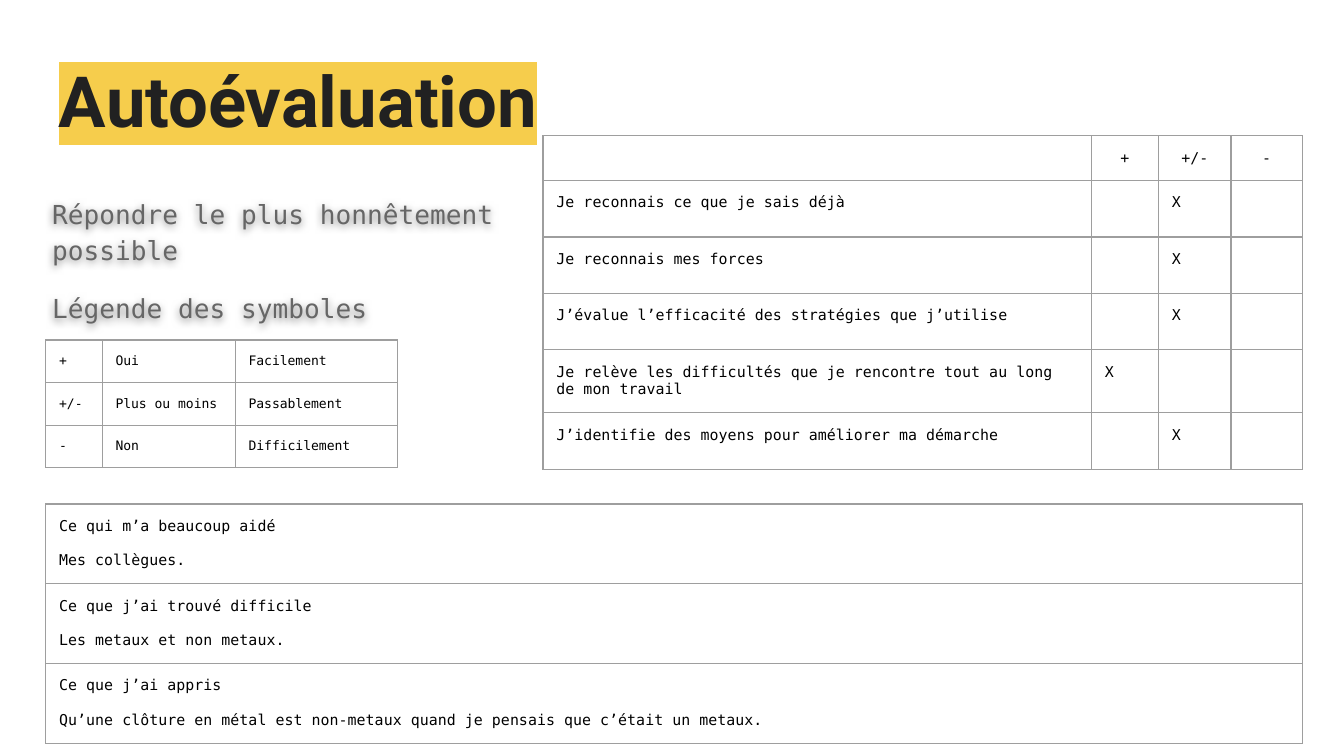
from pptx import Presentation
from pptx import util as u
from pptx.dml.color import RGBColor
from pptx.enum import text
from pptx.oxml import parse_xml
from pptx.oxml.ns import nsdecls

COLORS = {
    "title": "212121",
    "mark": "F6CD4C",
    "body": "666666",
    "cell": "000000",
    "line": "9E9E9E",
}
MONO = "DejaVu Sans Mono"
LEGEND = [
    ["+", "Oui", "Facilement"],
    ["+/-", "Plus ou moins", "Passablement"],
    ["-", "Non", "Difficilement"],
]
MARKS = ["+", "+/-", "-"]
SKILLS = [
    ("Je reconnais ce que je sais déjà", "+/-"),
    ("Je reconnais mes forces", "+/-"),
    ("J’évalue l’efficacité des stratégies que j’utilise", "+/-"),
    ("Je relève les difficultés que je rencontre tout au long de mon travail", "+"),
    ("J’identifie des moyens pour améliorer ma démarche", "+/-"),
]
NOTES = [
    ["Ce qui m’a beaucoup aidé\nMes collègues."],
    ["Ce que j’ai trouvé difficile\nLes metaux et non metaux."],
    ["Ce que j’ai appris\n"
     "Qu’une clôture en métal est non-metaux quand je pensais que c’était un metaux."],
]


def set_font(para, name, size, color, bold=False):
    font = para.font
    font.name = name
    font.size = u.Pt(size)
    font.bold = bold
    font.color.rgb = RGBColor.from_string(COLORS[color])


def set_pads(frame):
    frame.margin_left = frame.margin_right = u.Inches(0.1)
    frame.margin_top = frame.margin_bottom = u.Inches(0.1)


def add_box(slide, left, top, width, height, words):
    box = slide.shapes.add_textbox(*map(u.Inches, (left, top, width, height)))
    frame = box.text_frame
    frame.word_wrap = True
    set_pads(frame)
    frame.text = words
    return box


def add_title(slide):
    frame = add_box(slide, 0.34, 0.3, 9.32, 0.88, "Autoévaluation").text_frame
    frame.vertical_anchor = text.MSO_ANCHOR.MIDDLE
    para = frame.paragraphs[0]
    set_font(para, "Roboto", 37.8, "title", True)
    para.runs[0].font._element.append(parse_xml(
        f'<a:highlight {nsdecls("a")}><a:srgbClr val="{COLORS["mark"]}"/></a:highlight>'))


def add_body(slide):
    box = add_box(slide, 0.29, 1.34, 4.37, 3.65,
                  "Répondre le plus honnêtement possible\nLégende des symboles")
    for para in box.text_frame.paragraphs:
        para.line_spacing = 1.15
        set_font(para, MONO, 14, "body")
    para.space_before = para.space_after = u.Pt(12)
    box._element.spPr.append(parse_xml(
        f'<a:effectLst {nsdecls("a")}><a:outerShdw blurRad="57150" dist="19050" '
        'dir="5400000" algn="bl" rotWithShape="0"><a:srgbClr val="000000">'
        '<a:alpha val="50000"/></a:srgbClr></a:outerShdw></a:effectLst>'))


def add_edges(cell):
    props = cell._tc.get_or_add_tcPr()
    for spot, side in enumerate("LRTB"):
        props.insert(spot, parse_xml(
            f'<a:ln{side} {nsdecls("a")} w="9525"><a:solidFill>'
            f'<a:srgbClr val="{COLORS["line"]}"/></a:solidFill></a:ln{side}>'))


def fill_cell(cell, words, size):
    cell.text = words
    set_pads(cell)
    cell.fill.background()
    add_edges(cell)
    for spot, para in enumerate(cell.text_frame.paragraphs):
        if spot:
            para.space_before = u.Pt(9.2)
        set_font(para, MONO, size, "cell")
        if not words:
            para._p.get_or_add_endParaRPr().set("sz", str(size * 100))


def add_grid(slide, left, top, cols, rows, data, size):
    frame = slide.shapes.add_table(
        len(rows), len(cols),
        *map(u.Inches, (left, top, sum(cols), sum(rows))))
    grid = frame.table
    grid.first_row = grid.horz_banding = False
    for col, width in zip(grid.columns, cols):
        col.width = u.Inches(width)
    for row, height, line in zip(grid.rows, rows, data):
        row.height = u.Inches(height)
        for cell, words in zip(row.cells, line):
            fill_cell(cell, words, size)
    return grid


def add_skills(slide):
    data = [[""] + MARKS]
    for skill, mark in SKILLS:
        data.append([skill] + ["X" if mark == head else "" for head in MARKS])
    rows = [0.33, 0.42, 0.42, 0.42, 0.47, 0.42]
    grid = add_grid(slide, 4.04, 1.01, [4.08, 0.5, 0.54, 0.53], rows, data, 8)
    for cell in grid.rows[0].cells:
        cell.text_frame.paragraphs[0].alignment = text.PP_ALIGN.CENTER


def main():
    deck = Presentation()
    deck.slide_width = u.Inches(10)
    deck.slide_height = u.Inches(10) * 9 // 16
    slide = deck.slides.add_slide(deck.slide_layouts[6])
    add_title(slide)
    add_body(slide)
    add_grid(slide, 0.34, 2.53, [0.42, 0.99, 1.21], [0.31] * 3, LEGEND, 7)
    add_skills(slide)
    add_grid(slide, 0.34, 3.75, [9.35], [0.59] * 3, NOTES, 8)
    deck.save("out.pptx")


if __name__ == "__main__":
    main()
